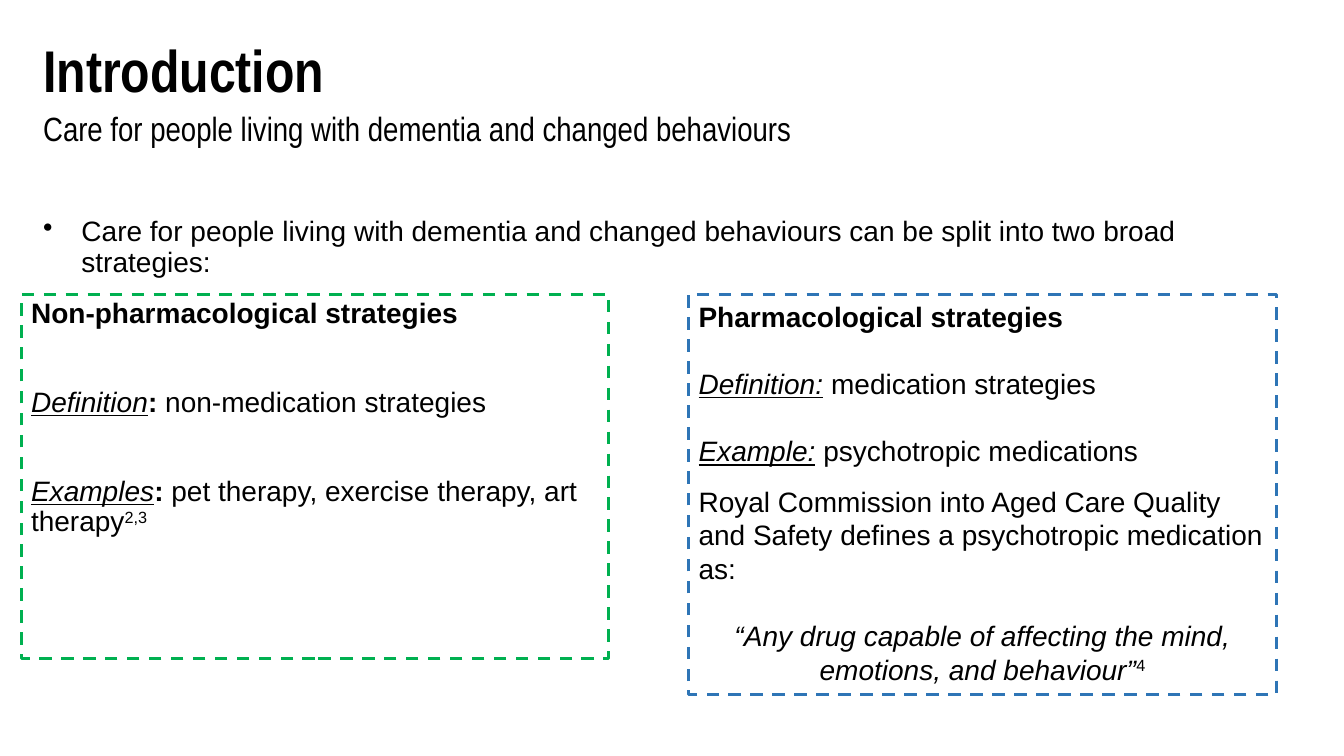
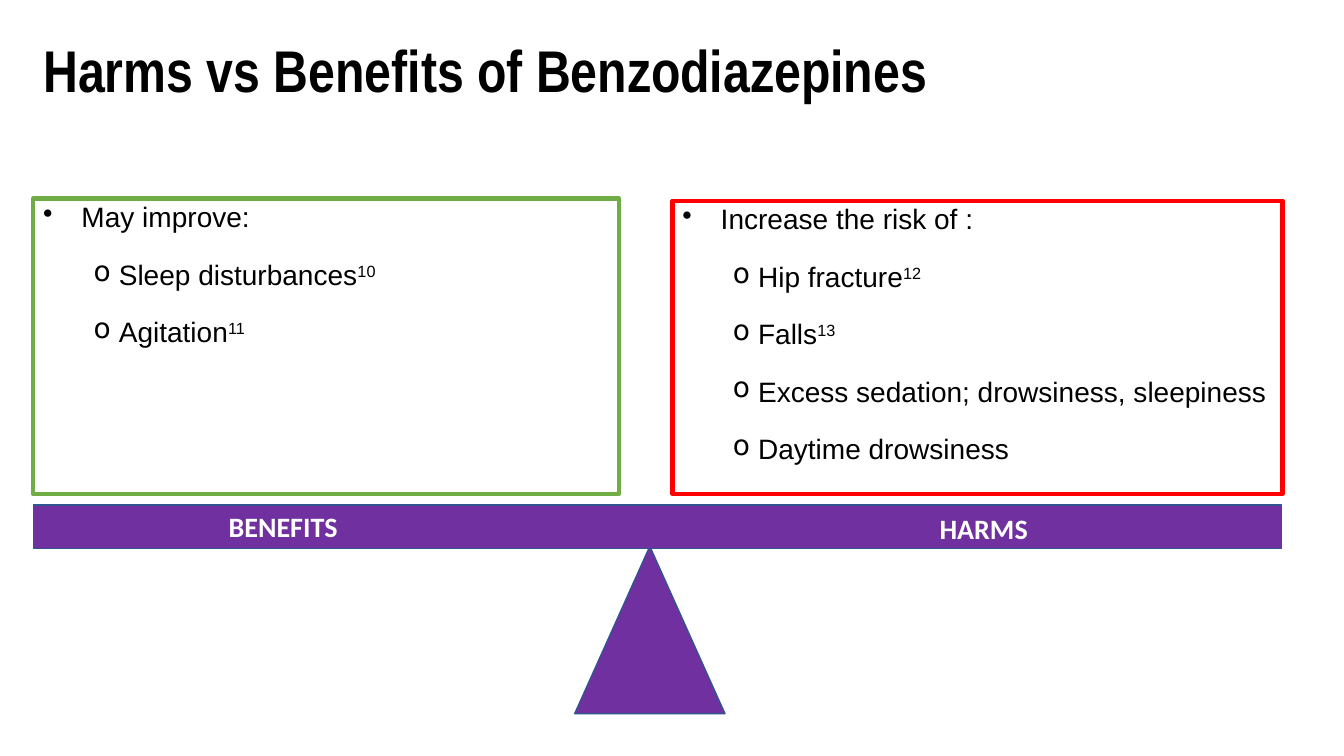
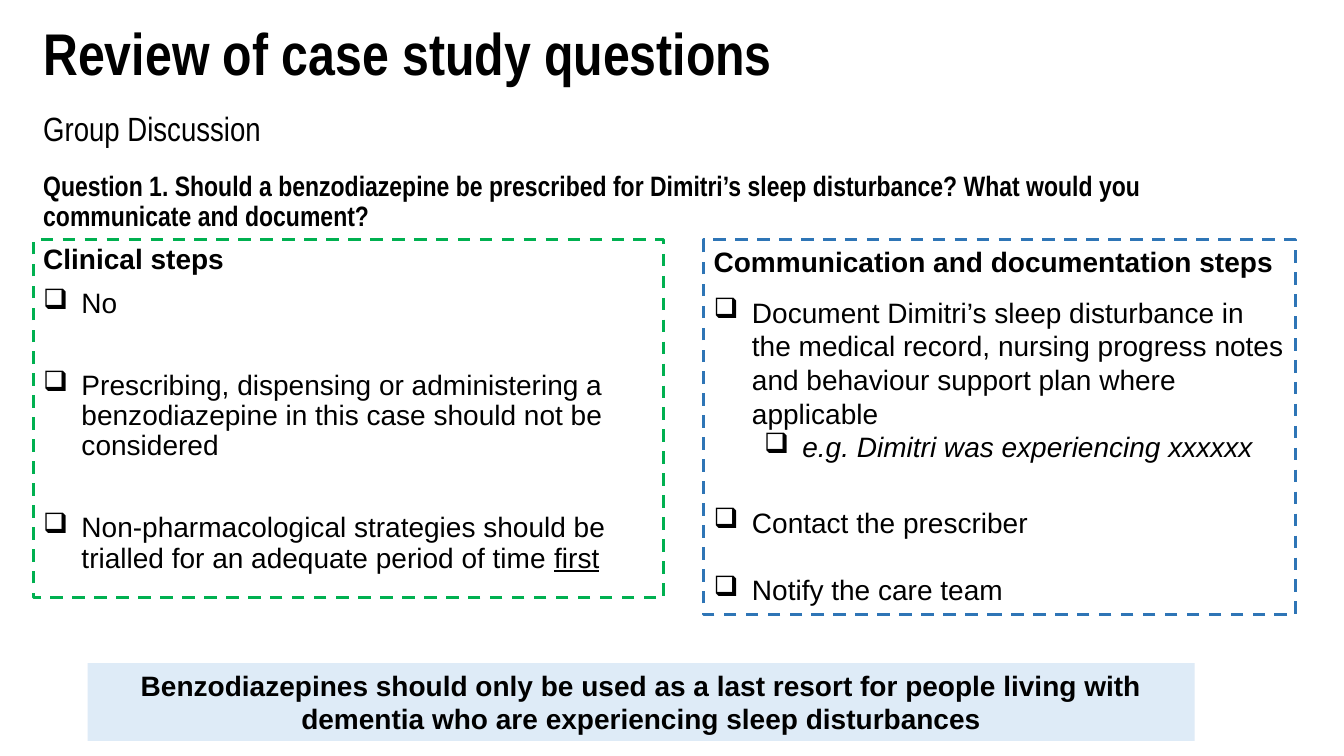
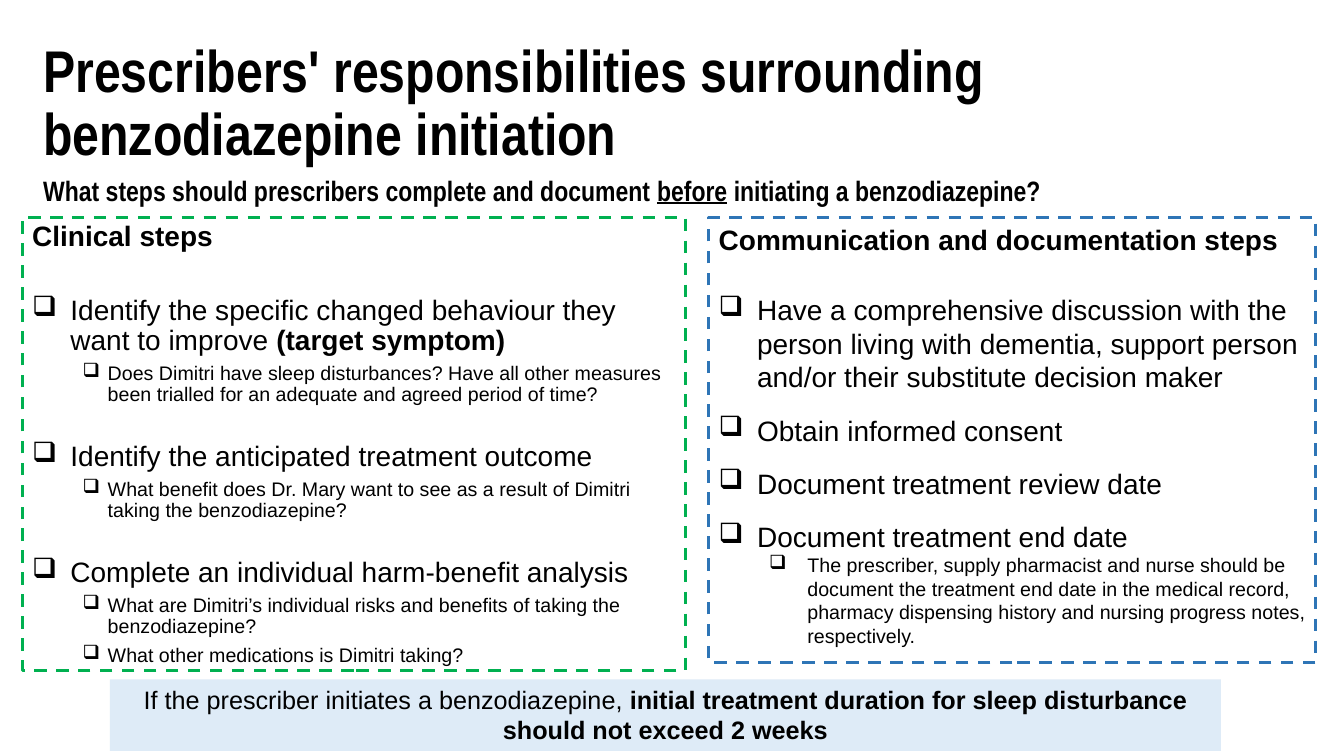
"""Build four slides on benzodiazepine care for people living with dementia."""
from lxml.etree import SubElement
from pptx import Presentation
from pptx.dml.color import RGBColor
from pptx.enum.dml import MSO_LINE
from pptx.enum.shapes import MSO_SHAPE
from pptx.enum.text import MSO_ANCHOR, MSO_AUTO_SIZE, PP_ALIGN
from pptx.oxml.ns import qn
from pptx.util import Inches, Pt

BLACK, WHITE, PURPLE, PALE_BLUE = "000000", "FFFFFF", "7030A0", "DEEBF7"
GREEN, BLUE, RED, LEAF, NAVY = "00B050", "2E75B6", "FF0000", "70AD47", "325491"

# role: font, size, line spacing, text colour
TEXT_ROLES = {
    "title": ("Arial Narrow", 42, 0.9, BLACK),
    "subtitle": ("Arial Narrow", 24, 0.9, BLACK),
    "question": ("Arial Narrow", 20, 0.9, BLACK),
    "body": ("Arial", 20, 0.9, BLACK),
    "label": ("Calibri", 20, 1, WHITE),
    "green panel": ("Arial", 20, 0.9, BLACK),
    "blue panel": ("Arial", 20, 1, BLACK),
    "benefits panel": ("Arial", 20, 0.9, BLACK),
    "harms panel": ("Arial", 20, 0.9, BLACK),
    "banner": ("Arial", 20, 1, BLACK),
    "small banner": ("Arial", 18, 1, BLACK),
    "beam": ("Arial", 20, 1, WHITE),
    "pivot": ("Arial", 20, 1, WHITE),
}

# role: preset, fill, line colour, line width, dash
SHAPE_ROLES = {
    "green panel": (MSO_SHAPE.RECTANGLE, None, GREEN, 2.25, MSO_LINE.DASH),
    "blue panel": (MSO_SHAPE.RECTANGLE, None, BLUE, 2.25, MSO_LINE.DASH),
    "benefits panel": (MSO_SHAPE.RECTANGLE, WHITE, LEAF, 3, None),
    "harms panel": (MSO_SHAPE.RECTANGLE, None, RED, 3, None),
    "banner": (MSO_SHAPE.RECTANGLE, PALE_BLUE, None, 0, None),
    "small banner": (MSO_SHAPE.RECTANGLE, PALE_BLUE, None, 0, None),
    "beam": (MSO_SHAPE.RECTANGLE, PURPLE, NAVY, 1, None),
    "pivot": (MSO_SHAPE.FLOWCHART_EXTRACT, PURPLE, NAVY, 1, None),
}

# kind: level, left margin, first-line indent, bullet, own size, own line spacing
KINDS = {
    "plain": (0, 0, 0, None, None, None),
    "centre": (0, 0, 0, None, None, None),
    "dot": (0, 0.38, -0.38, "•", None, None),
    "circle": (1, 0.75, -0.25, "o", None, 1.5),
    "check": (0, 0.38, -0.38, "❑", None, None),
    "example": (1, 0.88, -0.38, "❑", None, None),
    "detail": (1, 0.75, -0.25, "❑", 14, None),
    "note": (1, 0.88, -0.38, "❑", 14, None),
}

# page: (role, left, top, width, height, paragraphs)
# paragraph: (kind, space before, (text, marks), ...) with marks b, i, u and ^
PAGES = [
    [
        ("title", 0.33, 0.36, 8.15, 0.81, [("plain", 0, ("Introduction", "b"))]),
        ("subtitle", 0.33, 1.07, 10.44, 0.51, [
            ("plain", 0, ("Care for people living with dementia and changed behaviours", "")),
        ]),
        ("body", 0.33, 2.11, 11.83, 0.89, [
            ("dot", 0, ("Care for people living with dementia and changed behaviours can be "
                        "split into two broad strategies:", "")),
        ]),
        ("green panel", 0.21, 2.92, 5.83, 3.61, [
            ("plain", 0, ("Non-pharmacological strategies", "b")),
            ("plain", 42, ("Definition", "iu"), (": ", "b"), ("non-medication strategies", "")),
            ("plain", 42, ("Examples", "iu"), (": ", "b"),
             ("pet therapy, exercise therapy, art therapy", ""), ("2,3", "^")),
        ]),
        ("blue panel", 6.83, 2.92, 5.83, 3.97, [
            ("plain", 0, ("Pharmacological strategies", "b")),
            ("plain", 24, ("Definition:", "iu"), (" medication strategies", "")),
            ("plain", 24, ("Example:", "iu"), (" psychotropic medications", "")),
            ("plain", 12, ("Royal Commission into Aged Care Quality and Safety defines a "
                           "psychotropic medication as:", "")),
            ("centre", 24, ("“Any drug capable of affecting the mind, emotions, and behaviour”",
                            "i"), ("4", "^")),
        ]),
    ],
    [
        ("title", 0.33, 0.36, 9.4, 1.57, [
            ("plain", 0, ("Harms vs Benefits of Benzodiazepines", "b")),
        ]),
        ("harms panel", 6.67, 1.99, 6.05, 2.91, [
            ("dot", 0, ("Increase the risk of :", "")),
            ("circle", 5, ("Hip fracture", ""), ("12", "^")),
            ("circle", 5, ("Falls", ""), ("13", "^")),
            ("circle", 5, ("Excess sedation; drowsiness, sleepiness", "")),
            ("circle", 5, ("Daytime drowsiness", "")),
        ]),
        ("benefits panel", 0.33, 1.97, 5.81, 2.93, [
            ("dot", 0, ("May improve:", "")),
            ("circle", 5, ("Sleep disturbances", ""), ("10", "^")),
            ("circle", 5, ("Agitation", ""), ("11", "^")),
        ]),
        ("pivot", 5.7, 5.42, 1.49, 1.66, []),
        ("beam", 0.33, 5.01, 12.38, 0.43, []),
        ("label", 2.17, 5.01, 1.68, 0.44, [("plain", 0, ("BENEFITS", "b"))]),
        ("label", 9.22, 5.03, 1.49, 0.44, [("plain", 0, ("HARMS", "b"))]),
    ],
    [
        ("title", 0.33, 0.2, 12.04, 0.79, [
            ("plain", 0, ("Review of case study questions", "b")),
        ]),
        ("subtitle", 0.33, 1.07, 8.15, 0.51, [("plain", 0, ("Group Discussion", ""))]),
        ("question", 0.33, 1.66, 11.82, 0.44, [
            ("plain", 0, ("Question 1. Should a benzodiazepine be prescribed for Dimitri’s sleep "
                          "disturbance? What would you communicate and document?", "b")),
        ]),
        ("green panel", 0.33, 2.38, 6.25, 3.55, [
            ("plain", 0, ("Clinical steps", "b")),
            ("check", 10, ("No", "")),
            ("check", 37, ("Prescribing, dispensing or administering a benzodiazepine in this "
                           "case should not be considered", "")),
            ("check", 37, ("Non-pharmacological strategies should be trialled for an adequate "
                           "period of time ", ""), ("first", "u")),
        ]),
        ("blue panel", 6.98, 2.38, 5.87, 3.72, [
            ("plain", 0, ("Communication and documentation steps", "b")),
            ("check", 12, ("Document Dimitri’s sleep disturbance in the medical record, nursing "
                           "progress notes and behaviour support plan where applicable", "")),
            ("example", 0, ("e.g. Dimitri was experiencing xxxxxx", "i")),
            ("check", 30, ("Contact the prescriber", "")),
            ("check", 24, ("Notify the care team", "")),
        ]),
        ("banner", 0.87, 6.58, 10.98, 0.77, [
            ("centre", 0, ("Benzodiazepines should only be used as a last resort for people "
                           "living with dementia who are experiencing sleep disturbances", "b")),
        ]),
    ],
    [
        ("title", 0.33, 0.36, 11.78, 0.81, [
            ("plain", 0, ("Prescribers' responsibilities surrounding benzodiazepine initiation",
                          "b")),
        ]),
        ("question", 0.33, 1.71, 11.42, 0.37, [
            ("plain", 0, ("What steps should prescribers complete and document ", "b"),
             ("before", "bu"), (" initiating a benzodiazepine?", "b")),
        ]),
        ("green panel", 0.22, 2.16, 6.58, 4.49, [
            ("plain", 0, ("Clinical steps", "b")),
            ("check", 31, ("Identify the specific changed behaviour they want to improve ", ""),
             ("(target symptom)", "b")),
            ("detail", 5, ("Does Dimitri have sleep disturbances? Have all other measures been "
                           "trialled for an adequate and agreed period of time?", "")),
            ("check", 26, ("Identify the anticipated treatment outcome", "")),
            ("detail", 5, ("What benefit does Dr. Mary want to see as a result of Dimitri taking "
                           "the benzodiazepine?", "")),
            ("check", 26, ("Complete an individual harm-benefit analysis", "")),
            ("detail", 5, ("What are Dimitri’s individual risks and benefits of taking the "
                           "benzodiazepine?", "")),
            ("detail", 5, ("What other medications is Dimitri taking?", "")),
        ]),
        ("blue panel", 7.03, 2.16, 6.02, 4.41, [
            ("plain", 0, ("Communication and documentation steps", "b")),
            ("check", 26, ("Have a comprehensive discussion with the person living with dementia, "
                           "support person and/or their substitute decision maker", "")),
            ("check", 14, ("Obtain informed consent", "")),
            ("check", 14, ("Document treatment review date", "")),
            ("check", 14, ("Document treatment end date", "")),
            ("note", 0, ("The prescriber, supply pharmacist and nurse should be document the "
                         "treatment end date in the medical record, pharmacy dispensing history "
                         "and nursing progress notes, respectively.", "")),
        ]),
        ("small banner", 1.09, 6.74, 11.02, 0.71, [
            ("centre", 0, ("If the prescriber initiates a benzodiazepine, ", ""),
             ("initial treatment duration for sleep disturbance should not exceed 2 weeks", "b")),
        ]),
    ],
]


def color(value):
    return RGBColor.from_string(value)


def write_paragraph(para, role, kind, space_before, spans):
    font_name, size, spacing, text_color = TEXT_ROLES[role]
    level, left, indent, bullet, own_size, own_spacing = KINDS[kind]
    properties = para._p.get_or_add_pPr()
    properties.set("marL", str(Inches(left)))
    properties.set("indent", str(Inches(indent)))
    if bullet:
        SubElement(properties, qn("a:buChar")).set("char", bullet)
    else:
        SubElement(properties, qn("a:buNone"))
    para.level = level
    para.alignment = PP_ALIGN.CENTER if kind == "centre" else PP_ALIGN.LEFT
    para.line_spacing = own_spacing or spacing
    para.space_before = Pt(space_before)
    for text, marks in spans:
        span = para.add_run()
        span.text = text
        span.font.name = font_name
        span.font.size = Pt(own_size or size)
        span.font.color.rgb = color(text_color)
        span.font.bold = "b" in marks
        span.font.italic = "i" in marks
        span.font.underline = "u" in marks
        if "^" in marks:
            span._r.get_or_add_rPr().set("baseline", "30000")


deck = Presentation()
deck.slide_width = Inches(13.33)
deck.slide_height = Inches(7.5)

for items in PAGES:
    page = deck.slides.add_slide(deck.slide_layouts[5])
    for role, left, top, width, height, paragraphs in items:
        place = [Inches(length) for length in (left, top, width, height)]
        if role == "title":
            box = page.shapes.title
            box.left, box.top, box.width, box.height = place
        elif role in SHAPE_ROLES:
            preset, fill, line, line_width, dash = SHAPE_ROLES[role]
            box = page.shapes.add_shape(preset, *place)
            box.shadow.inherit = False
            if fill:
                box.fill.solid()
                box.fill.fore_color.rgb = color(fill)
            else:
                box.fill.background()
            if line:
                box.line.color.rgb = color(line)
                box.line.width = Pt(line_width)
                box.line.dash_style = dash
            else:
                box.line.fill.background()
        else:
            box = page.shapes.add_textbox(*place)
        frame = box.text_frame
        frame.word_wrap = True
        frame.auto_size = MSO_AUTO_SIZE.NONE
        frame.vertical_anchor = MSO_ANCHOR.TOP
        for number, (kind, space_before, *spans) in enumerate(paragraphs):
            para = frame.add_paragraph() if number else frame.paragraphs[0]
            write_paragraph(para, role, kind, space_before, spans)

deck.save("out.pptx")
